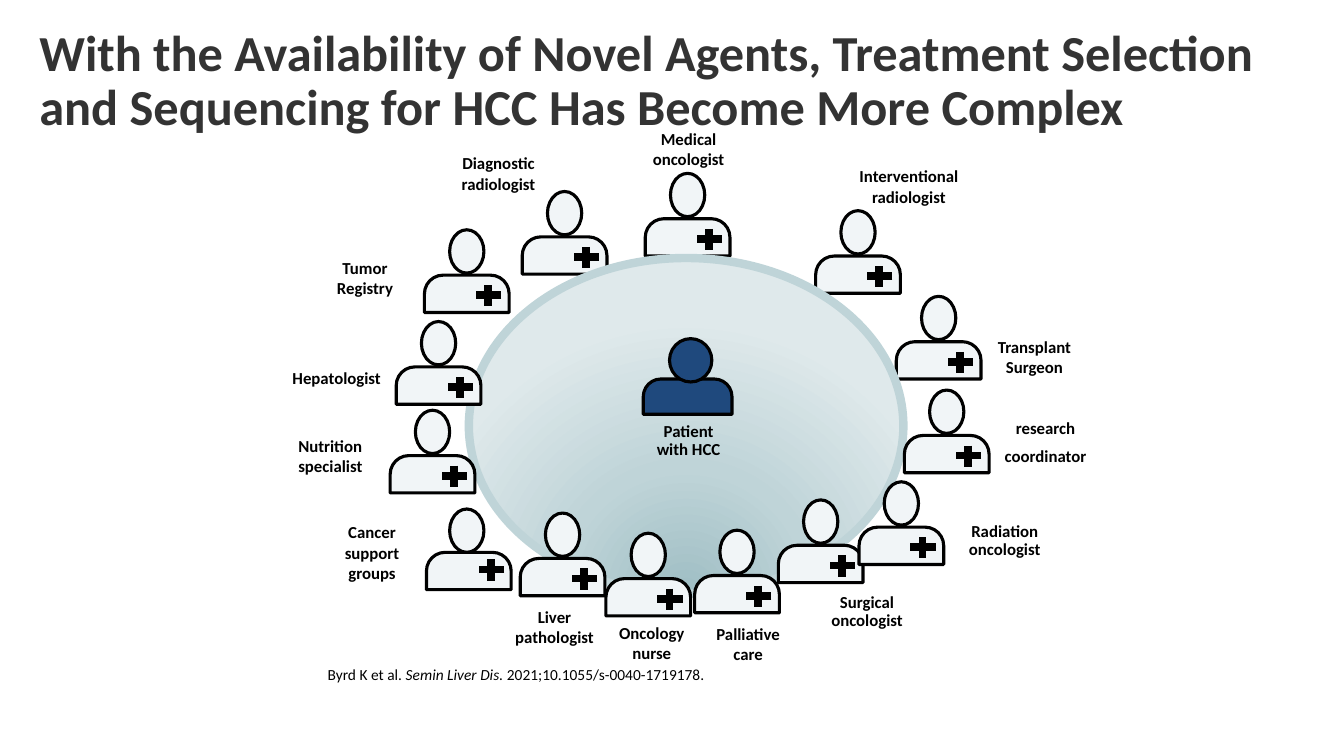
from lxml.etree import SubElement
from pptx import Presentation
from pptx.dml.color import RGBColor
from pptx.enum.shapes import MSO_CONNECTOR, MSO_SHAPE
from pptx.enum.text import MSO_ANCHOR, MSO_AUTO_SIZE, PP_ALIGN
from pptx.oxml import parse_xml
from pptx.oxml.ns import nsdecls, qn
from pptx.util import Pt

PX = 9144  # 100 px to the inch
BLACK = RGBColor(0x00, 0x00, 0x00)
GREY = RGBColor(0x33, 0x33, 0x33)
PALE = RGBColor(0xF1, 0xF5, 0xF7)
NAVY = RGBColor(0x1F, 0x49, 0x7D)
RIM = RGBColor(0xBF, 0xD4, 0xD8)
FONT = "Calibri"

# body left and top
BACK_STAFF = [(889, 339), (640, 217), (809, 254), (518, 235)]
FRONT_STAFF = [(772, 541), (601, 574), (689, 571), (516, 554), (421, 273),
               (387, 452), (393, 364), (897, 432), (852, 523)]

# "|" starts a paragraph, "\n" breaks a line; left, top, width, height, spacing
LABELS = [
    ("research|coordinator", 976, 412, 122, 60, 0.9),
    ("Medical|oncologist", 595, 123, 176, 50, 1),
    ("Radiation oncologist", 939, 514, 115, 46, 0.9),
    ("Oncology\nnurse", 595, 613, 103, 50, 1),
    ("Palliative\ncare", 681, 614, 122, 50, 1),
    ("Tumor Registry", 301, 251, 122, 50, 1),
    ("Patient with HCC", 641, 415, 84, 65, 0.9),
    ("Surgical\noncologist", 805, 584, 110, 46, 0.9),
    ("Cancer|support|groups", 322, 513, 94, 71, 1),
    ("Interventional|radiologist", 830, 160, 143, 50, 1),
    ("Transplant|Surgeon", 970, 329, 112, 50, 1),
    ("Liver|pathologist", 491, 597, 118, 50, 1),
    ("Diagnostic|radiologist", 438, 147, 113, 50, 1),
    ("Hepatologist", 269, 360, 130, 30, 1),
    ("Nutrition|specialist", 286, 427, 105, 50, 1),
]

deck = Presentation()
deck.slide_width, deck.slide_height = 1333 * PX, 750 * PX
slide = deck.slides.add_slide(deck.slide_layouts[5])
shapes = slide.shapes


def add_part(kind, box, fill, line=BLACK, width=2.25):
    part = shapes.add_shape(kind, *[n * PX for n in box])
    part.shadow.inherit = False
    part.fill.solid()
    part.fill.fore_color.rgb = fill
    part.line.color.rgb = line
    part.line.width = Pt(width)
    if kind == MSO_SHAPE.ROUND_2_SAME_RECTANGLE:
        part.adjustments[0] = 0.5
        part.adjustments[1] = 0
    return part


def add_staff(x, y, cross=(63, 10), head=(25, -45)):
    """Draw a team member: body, head and a cross on the chest."""
    add_part(MSO_SHAPE.ROUND_2_SAME_RECTANGLE, (x, y, 84, 37), PALE)
    add_part(MSO_SHAPE.OVAL, (x + head[0], y + head[1], 34, 43), PALE)
    cx, top = x + cross[0], y + cross[1]
    for ends in [(cx, top, cx, top + 21), (cx + 13, top + 10, cx - 12, top + 10)]:
        bar = shapes.add_connector(MSO_CONNECTOR.STRAIGHT, *[n * PX for n in ends])
        bar.line.color.rgb = BLACK
        bar.line.width = Pt(5.5)
        SubElement(bar._element.spPr, qn("a:effectLst"))


# Title
title = shapes.title
title.left, title.top, title.width, title.height = 29 * PX, 19 * PX, 1278 * PX, 125 * PX
frame = title.text_frame
frame.word_wrap = True
frame.auto_size = MSO_AUTO_SIZE.NONE
frame.vertical_anchor = MSO_ANCHOR.MIDDLE
para = frame.paragraphs[0]
para.alignment = PP_ALIGN.LEFT
para.line_spacing = 0.9
run = para.add_run()
run.text = ("With the Availability of Novel Agents, Treatment Selection "
            "and Sequencing for HCC Has Become More Complex")
run.font.name, run.font.size, run.font.bold = FONT, Pt(36), True
run.font.color.rgb = GREY

# Team around the table
for x, y in BACK_STAFF:
    add_staff(x, y)

table = add_part(MSO_SHAPE.OVAL, (465, 256, 431, 333), PALE, RIM, 6)
solid = table._element.spPr.find(qn("a:solidFill"))
stops = [(0, "9FBEC4"), (46000, "BFD4D8"), (100000, "DFE9EB")]
marks = "".join(f'<a:gs pos="{pos}"><a:srgbClr val="{tint}"/></a:gs>' for pos, tint in stops)
solid.getparent().replace(solid, parse_xml(
    f'<a:gradFill {nsdecls("a")} rotWithShape="1"><a:gsLst>{marks}</a:gsLst>'
    '<a:path path="circle"><a:fillToRect l="50000" t="130000" r="50000" b="-30000"/>'
    '</a:path></a:gradFill>'))

for x, y in FRONT_STAFF:
    add_staff(x, y)
add_staff(423, 548, cross=(64, 7), head=(23, -43))

# Patient
add_part(MSO_SHAPE.ROUND_2_SAME_RECTANGLE, (638, 376, 88, 35), NAVY)
add_part(MSO_SHAPE.OVAL, (664, 336, 42, 43), NAVY)

# Role labels
for text, x, y, w, h, space in LABELS:
    frame = shapes.add_textbox(x * PX, y * PX, w * PX, h * PX).text_frame
    frame.word_wrap = True
    for i, block in enumerate(text.split("|")):
        para = frame.add_paragraph() if i else frame.paragraphs[0]
        para.alignment = PP_ALIGN.LEFT if text.startswith("Nutrition") else PP_ALIGN.CENTER
        para.line_spacing = space
        if i and space < 1:
            para.space_before = Pt(7)
        for j, line in enumerate(block.split("\n")):
            if j:
                para.add_line_break()
            run = para.add_run()
            run.text = line
            run.font.name, run.font.size, run.font.bold = FONT, Pt(12), True
            run.font.color.rgb = BLACK

# Source
frame = shapes.add_textbox(315 * PX, 657 * PX, 992 * PX, 80 * PX).text_frame
frame.word_wrap = True
para = frame.paragraphs[0]
para.line_spacing = 0.9
for text, slant in [("Byrd K et al. ", False), ("Semin Liver Dis. ", True),
                    ("2021;10.1055/s-0040-1719178.", False)]:
    run = para.add_run()
    run.text = text
    run.font.name, run.font.size, run.font.italic = FONT, Pt(11), slant
    run.font.color.rgb = BLACK

deck.save("out.pptx")
